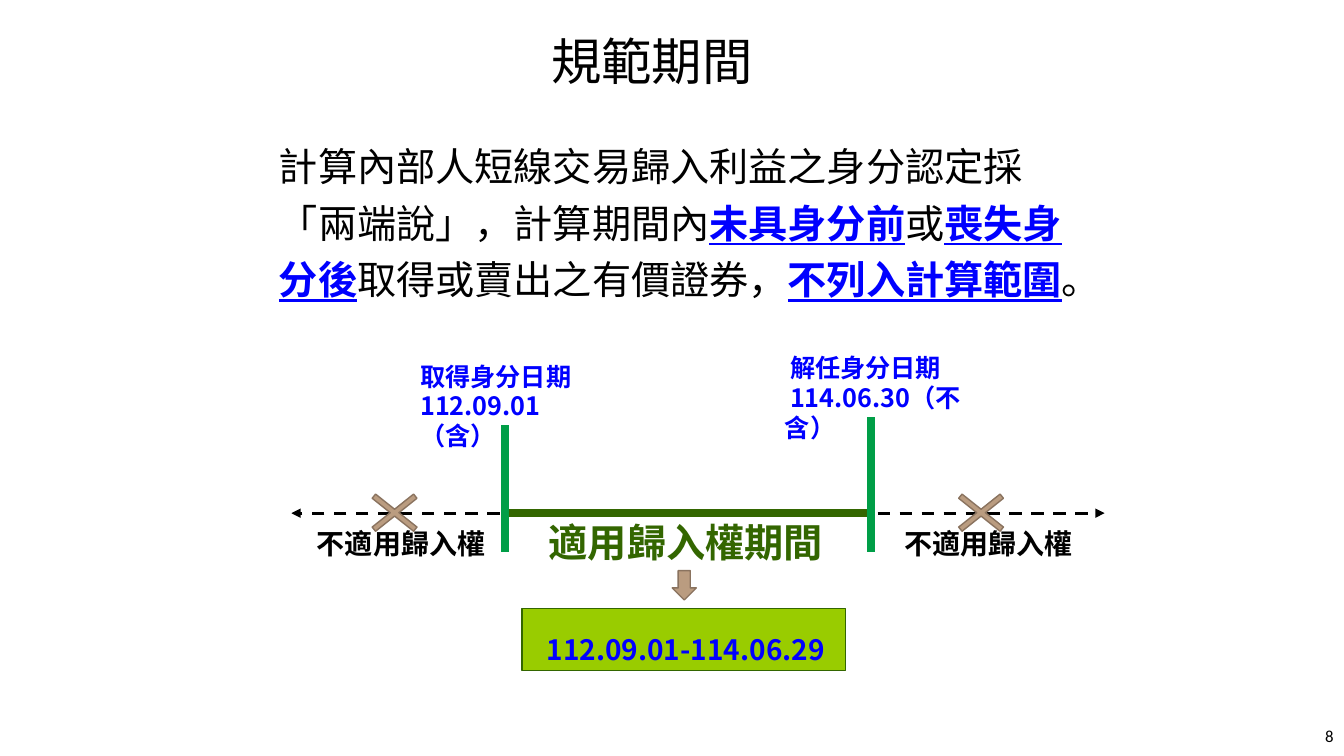
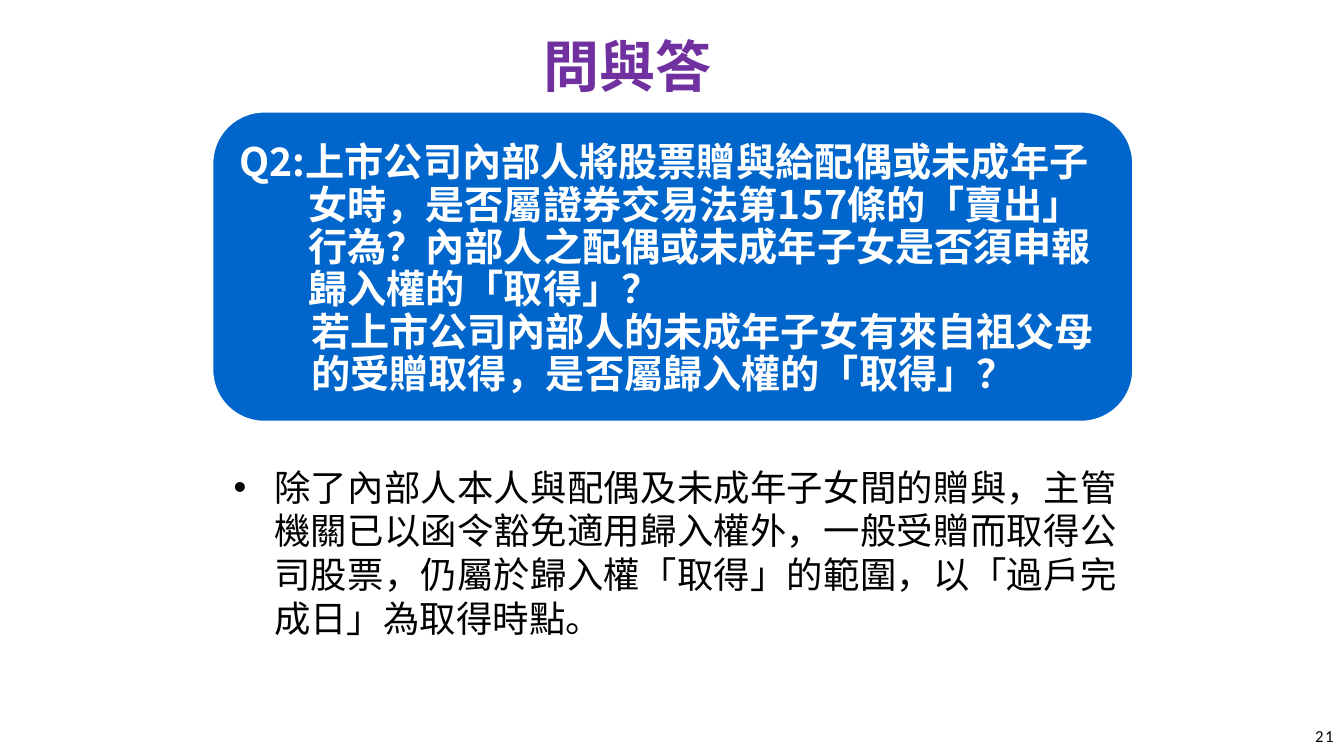
from dataclasses import dataclass
from typing import Any, Optional

import lxml.etree
import pptx
import pptx.dml.color
import pptx.enum.dml
import pptx.enum.shapes
import pptx.enum.text
import pptx.oxml.ns
import pptx.util

Cm = pptx.util.Cm
Pt = pptx.util.Pt
Align = pptx.enum.text.PP_ALIGN
Anchor = pptx.enum.text.MSO_ANCHOR
Preset = pptx.enum.shapes.MSO_SHAPE

CJK_FONT = "Noto Sans CJK SC"
NUMBER_FONT = "Calibri"
BLACK, WHITE, BLUE, PURPLE = "000000", "FFFFFF", "0000FF", "7030A0"
DARK_GREEN, BAR_GREEN, LIME = "336600", "009E47", "99CC00"
TAN, BROWN, PANEL_BLUE = "BA9C80", "8A735F", "0066CC"

AXIS_Y = 12.93
START_X, END_X = 12.73, 21.95
BAR_BOTTOM = 13.92


@dataclass
class Box:
    left: float
    top: float
    width: float
    height: float

    def lengths(self) -> list:
        return [Cm(v) for v in (self.left, self.top, self.width, self.height)]


@dataclass
class Span:
    text: str
    size: float
    color: str = BLACK
    bold: bool = False
    underline: bool = False
    font: str = CJK_FONT
    spacing: int = 0


@dataclass
class Para:
    spans: list[Span]
    align: Any = Align.LEFT
    line: Optional[float] = None
    margin: float = 0
    indent: float = 0
    bullet: str = ""


@dataclass
class Line:
    start: tuple[float, float]
    end: tuple[float, float]
    color: str
    width: float
    dashed_arrow: bool = False


@dataclass
class Figure:
    preset: Any
    box: Box
    fill: str
    outline: str


def rgb(value: str) -> pptx.dml.color.RGBColor:
    return pptx.dml.color.RGBColor.from_string(value)


def assign(target: Any, values: dict) -> None:
    for name, value in values.items():
        setattr(target, name, value)


def add_element(parent: Any, tag: str, **attributes: str) -> None:
    lxml.etree.SubElement(parent, pptx.oxml.ns.qn(tag), attributes)


def write_span(paragraph: Any, span: Span) -> None:
    run = paragraph.add_run()
    run.text = span.text
    assign(run.font, {"size": Pt(span.size), "bold": span.bold,
                      "underline": span.underline, "name": span.font})
    run.font.color.rgb = rgb(span.color)
    properties = run.font._element
    add_element(properties, "a:ea", typeface=span.font)
    if span.spacing:
        properties.set("spc", str(span.spacing))


def write_text(shape: Any, paras: list[Para], anchor: Any = Anchor.TOP, wrap: bool = True,
               margins: tuple = (0.25, 0.13, 0.25, 0.13)) -> None:
    """Fill a text frame; margins run left, top, right, bottom."""
    frame = shape.text_frame
    assign(frame, {"word_wrap": wrap, "vertical_anchor": anchor,
                   "auto_size": pptx.enum.text.MSO_AUTO_SIZE.NONE})
    sides = ("margin_left", "margin_top", "margin_right", "margin_bottom")
    assign(frame, {side: Cm(value) for side, value in zip(sides, margins)})
    for index, para in enumerate(paras):
        paragraph = frame.add_paragraph() if index else frame.paragraphs[0]
        paragraph.alignment = para.align
        if para.line:
            paragraph.line_spacing = Pt(para.line)
        properties = paragraph._p.get_or_add_pPr()
        properties.set("marL", str(Cm(para.margin)))
        properties.set("indent", str(Cm(para.indent)))
        if para.bullet:
            add_element(properties, "a:buFont", typeface="Arial")
            add_element(properties, "a:buChar", char=para.bullet)
        for span in para.spans:
            write_span(paragraph, span)


def add_text(slide: Any, box: Box, paras: list[Para], **layout: Any) -> None:
    write_text(slide.shapes.add_textbox(*box.lengths()), paras, **layout)


def add_caption(slide: Any, box: Box, span: Span) -> None:
    """One centred line that never wraps."""
    add_text(slide, box, [Para([span], Align.CENTER)], anchor=Anchor.MIDDLE,
             wrap=False, margins=(0.25, 0, 0.25, 0))


def add_figure(slide: Any, figure: Figure) -> Any:
    shape = slide.shapes.add_shape(figure.preset, *figure.box.lengths())
    shape.shadow.inherit = False
    shape.fill.solid()
    shape.fill.fore_color.rgb = rgb(figure.fill)
    shape.line.color.rgb = rgb(figure.outline)
    shape.line.width = Pt(1)
    return shape


def add_line(slide: Any, line: Line) -> None:
    connector = slide.shapes.add_connector(
        pptx.enum.shapes.MSO_CONNECTOR.STRAIGHT,
        *[Cm(value) for value in (*line.start, *line.end)])
    connector.line.color.rgb = rgb(line.color)
    connector.line.width = Pt(line.width)
    if line.dashed_arrow:
        connector.line.dash_style = pptx.enum.dml.MSO_LINE.DASH
        add_element(connector.line._get_or_add_ln(), "a:tailEnd", type="triangle")
    add_element(connector._element.spPr, "a:effectLst")


def new_slide(presentation: Any, box: Box, title: Span, number: str) -> Any:
    """Title-only slide with its heading and page number."""
    slide = presentation.slides.add_slide(presentation.slide_layouts[5])
    placeholder = slide.shapes.title
    assign(placeholder, dict(zip(("left", "top", "width", "height"), box.lengths())))
    write_text(placeholder, [Para([title], Align.CENTER)],
               anchor=Anchor.MIDDLE, margins=(0.25, 0, 0.25, 0))
    page = Span(number, 12, font=NUMBER_FONT, spacing=100)
    add_text(slide, Box(27.94, 18.03, 5.92, 1.02), [Para([page], Align.RIGHT)],
             anchor=Anchor.MIDDLE)
    return slide


def build_period(presentation: Any) -> None:
    slide = new_slide(presentation, Box(13.61, 0.61, 5.64, 1.8), Span("規範期間", 36), "8")

    # Rule, with the key phrases emphasised
    phrases = [
        ("計算內部人短線交易歸入利益之身分認定採「兩端說」，計算期間內", False),
        ("未具身分前", True),
        ("或", False),
        ("喪失身分後", True),
        ("取得或賣出之有價證券，", False),
        ("不列入計算範圍", True),
        ("。", False),
    ]
    spans = [Span(text, 28, BLUE if key else BLACK, key, key) for text, key in phrases]
    add_text(slide, Box(6.53, 3.23, 21.11, 5), [Para(spans, line=40.3, margin=0.25)])

    # Dates above the two ends of the period
    dates = [
        (Box(10.34, 8.97, 5.41, 1.8), 0, ("取得身分日期", "112.09.01（含）")),
        (Box(19.53, 8.76, 6.2, 1.8), 0.13, ("解任身分日期", "114.06.30（不含）")),
    ]
    for box, indent, texts in dates:
        add_text(slide, box, [Para([Span(text, 18, BLUE, True)], line=21.4, indent=indent)
                              for text in texts])

    # Timeline
    lines = [
        Line((12.6, AXIS_Y), (7.34, AXIS_Y), BLACK, 2.25, True),
        Line((22.12, AXIS_Y), (27.84, AXIS_Y), BLACK, 2.25, True),
        Line((START_X, AXIS_Y), (END_X, AXIS_Y), DARK_GREEN, 6),
        Line((START_X, 10.72), (START_X, BAR_BOTTOM), BAR_GREEN, 6),
        Line((END_X, 10.52), (END_X, BAR_BOTTOM), BAR_GREEN, 6.25),
    ]
    for line in lines:
        add_line(slide, line)

    # Excluded stretches on both sides
    for caption_left, cross_left in ((7.72, 8.94), (22.53, 23.72)):
        add_caption(slide, Box(caption_left, 13.13, 4.78, 1.12),
                    Span("不適用歸入權", 20, bold=True))
        cross = add_figure(slide, Figure(Preset.MATH_MULTIPLY,
                                         Box(cross_left, 12.12, 2.01, 1.6), TAN, BROWN))
        cross.adjustments[0] = 0.085

    # Applicable period and its result
    add_caption(slide, Box(13.54, 12.93, 7.49, 1.45),
                Span("適用歸入權期間", 28, DARK_GREEN, True))
    add_figure(slide, Figure(Preset.DOWN_ARROW, Box(16.94, 14.38, 0.61, 0.74), TAN, BROWN))
    result = add_figure(slide, Figure(Preset.RECTANGLE, Box(13.16, 15.34, 8.15, 1.55),
                                      LIME, DARK_GREEN))
    write_text(result, [Para([Span("112.09.01-114.06.29", 20, BLUE, True)], Align.CENTER)],
               anchor=Anchor.MIDDLE, margins=(0.35, 0.48, 0.25, 0))


def build_question(presentation: Any) -> None:
    slide = new_slide(presentation, Box(7.7, 0.64, 16.21, 1.98),
                      Span("問與答", 40, PURPLE, True), "21")

    # Question panel
    add_figure(slide, Figure(Preset.ROUNDED_RECTANGLE, Box(5.36, 2.82, 23.19, 7.8),
                             PANEL_BLUE, WHITE))
    questions = [
        ("Q2:上市公司內部人將股票贈與給配偶或未成年子女時，是否屬證券交易法第157條的「賣出」"
         "行為？內部人之配偶或未成年子女是否須申報歸入權的「取得」？", 1.73, -1.73),
        ("若上市公司內部人的未成年子女有來自祖父母的受贈取得，是否屬歸入權的「取得」？", 1.8, 0),
    ]
    add_text(slide, Box(5.74, 3.28, 22.43, 7.04),
             [Para([Span(text, 28, WHITE, True)], line=30.3, margin=margin, indent=indent)
              for text, margin, indent in questions],
             margins=(0.3, 0.3, 0.3, 0.3))

    # Answer
    answer = ("除了內部人本人與配偶及未成年子女間的贈與，主管機關已以函令豁免適用歸入權外，"
              "一般受贈而取得公司股票，仍屬於歸入權「取得」的範圍，以「過戶完成日」為取得時點。")
    add_text(slide, Box(5.13, 11.61, 23.6, 5.05),
             [Para([Span(answer, 26)], Align.JUSTIFY, 31.2, 1.02, -1.02, "•")],
             margins=(0.76, 0.1, 0.56, 0.1))


def main() -> None:
    presentation = pptx.Presentation()
    presentation.slide_width = Cm(33.87)
    presentation.slide_height = Cm(19.05)
    build_period(presentation)
    build_question(presentation)
    presentation.save("out.pptx")


if __name__ == "__main__":
    main()
